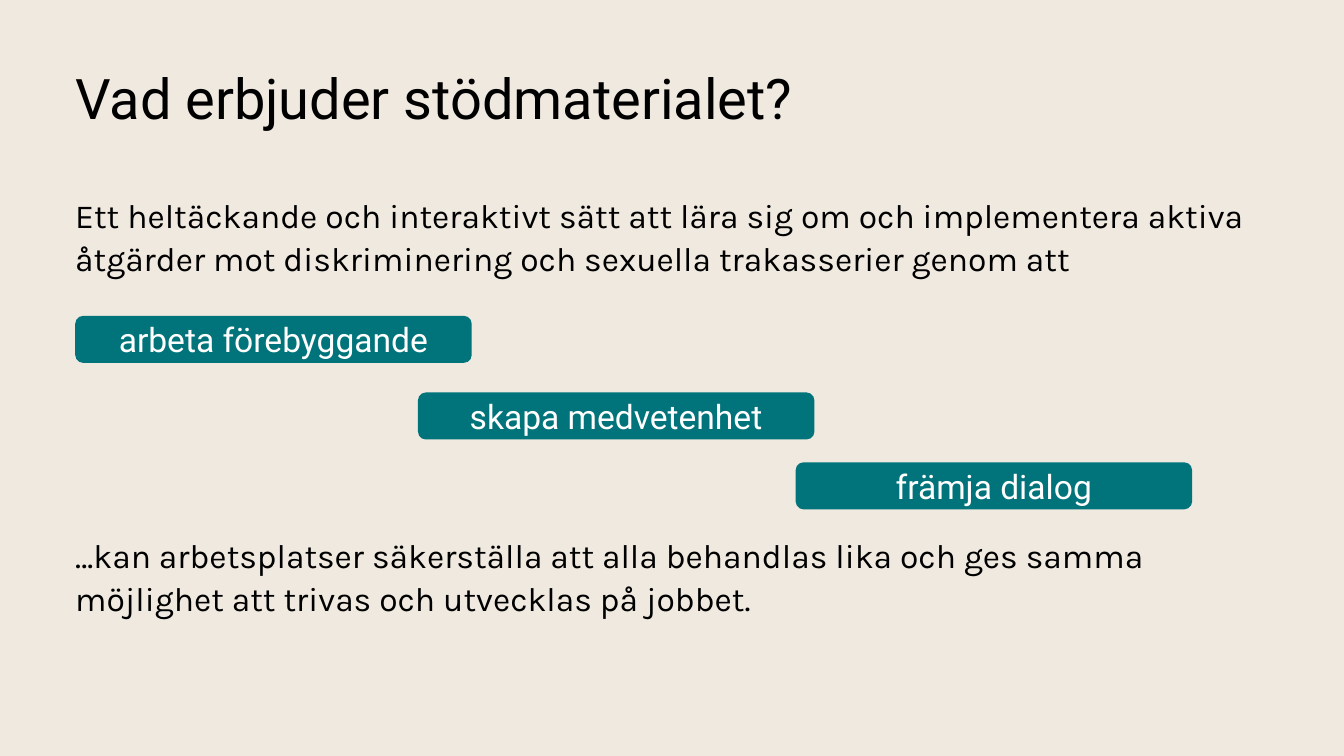
from pptx import Presentation
from pptx.dml.color import RGBColor
from pptx.enum.shapes import MSO_SHAPE
from pptx.enum.text import MSO_ANCHOR, PP_ALIGN
from pptx.util import Inches, Pt

ROUNDED = MSO_SHAPE.ROUNDED_RECTANGLE
TOP, MIDDLE = MSO_ANCHOR.TOP, MSO_ANCHOR.MIDDLE
LEFT, CENTER = PP_ALIGN.LEFT, PP_ALIGN.CENTER

# Content
TITLE = "Vad erbjuder stödmaterialet?"
BODY = [
    "Ett heltäckande och interaktivt sätt att lära sig om och implementera "
    "aktiva åtgärder mot diskriminering och sexuella trakasserier genom att",
    "…kan arbetsplatser säkerställa att alla behandlas lika och ges samma "
    "möjlighet att trivas och utvecklas på jobbet.",
]
STEPS = [  # text, left, top
    ("arbeta förebyggande", 0.56, 2.35),
    ("skapa medvetenhet", 3.11, 2.92),
    ("främja dialog", 5.92, 3.44),
]
SLIDE_W = 10
SLIDE_H = SLIDE_W * 9 / 16
MARGIN = 0.56
STEP_W, STEP_H = 2.95, 0.35
STEP_GAP = 128  # points kept free between the body paragraphs


def rgb(value):
    return RGBColor.from_string(value)


def write(tf, texts, font="Roboto", size=18, color="000000", align=LEFT,
          anchor=TOP, spacing=1.0, gap=0, after=0, inset=0):
    tf.word_wrap = True
    tf.vertical_anchor = anchor
    tf.margin_left = tf.margin_right = Inches(inset)
    tf.margin_top = tf.margin_bottom = Inches(inset / 2)
    for i, text in enumerate(texts):
        p = tf.add_paragraph() if i else tf.paragraphs[0]
        p.alignment = align
        p.line_spacing = spacing
        p.space_before = Pt(gap if i else 0)
        p.space_after = Pt(after)
        r = p.add_run()
        r.text = text
        r.font.name = font
        r.font.size = Pt(size)
        r.font.color.rgb = rgb(color)


def add_text(s, left, top, width, height, texts, **fmt):
    box = s.shapes.add_textbox(Inches(left), Inches(top), Inches(width), Inches(height))
    write(box.text_frame, texts, **fmt)


prs = Presentation()
prs.slide_width, prs.slide_height = Inches(SLIDE_W), Inches(SLIDE_H)
s = prs.slides.add_slide(prs.slide_layouts[6])
s.background.fill.solid()
s.background.fill.fore_color.rgb = rgb("EFE9DF")

# Title and body
add_text(s, MARGIN, 0.21, 8.18, 1.09, [TITLE], size=30, anchor=MIDDLE, spacing=0.9)
add_text(s, MARGIN, 1.43, 8.8, 3.86, BODY, font="Karla", spacing=1.07,
         gap=STEP_GAP, after=8)

# Staircase of steps
for text, left, top in STEPS:
    sp = s.shapes.add_shape(ROUNDED, Inches(left), Inches(top),
                            Inches(STEP_W), Inches(STEP_H))
    sp.shadow.inherit = False
    sp.fill.solid()
    sp.fill.fore_color.rgb = rgb("00747A")
    sp.line.fill.background()
    write(sp.text_frame, [text], color="FFFFFF", align=CENTER, anchor=MIDDLE, inset=0.1)

prs.save("out.pptx")
